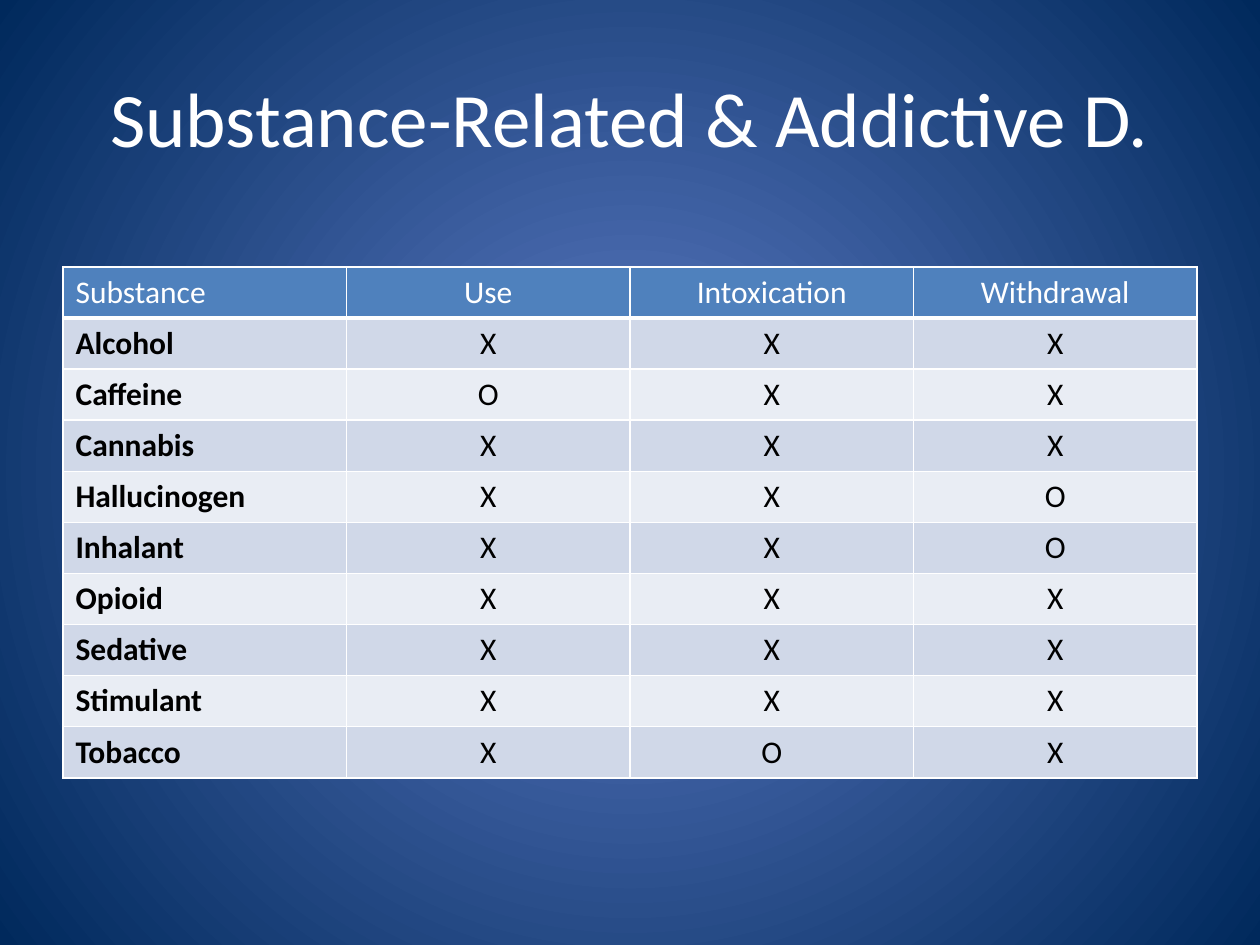
from typing import NamedTuple

from lxml.etree import SubElement
from pptx import Presentation
from pptx.dml.color import RGBColor
from pptx.enum.text import MSO_ANCHOR as Anchor, PP_ALIGN as Align
from pptx.oxml.ns import qn
from pptx.slide import Slide
from pptx.table import _Cell as Cell
from pptx.text.text import TextFrame
from pptx.util import Cm, Pt

COLORS = {
    "center": "5E7CC5",
    "edge": "00295C",
    "white": "FFFFFF",
    "black": "000000",
    "header": "4F81BD",
    "odd": "D0D8E8",
    "even": "E9EDF4",
}
FONT = "Calibri"
LEFT, WIDTH = Cm(1.27), Cm(22.86)
ROW_HEIGHT = Cm(1.03)


class Substance(NamedTuple):
    name: str
    use: str = "X"
    intoxication: str = "X"
    withdrawal: str = "X"


HEADINGS = Substance("Substance", "Use", "Intoxication", "Withdrawal")
SUBSTANCES = [
    Substance("Alcohol"),
    Substance("Caffeine", use="O"),
    Substance("Cannabis"),
    Substance("Hallucinogen", withdrawal="O"),
    Substance("Inhalant", withdrawal="O"),
    Substance("Opioid"),
    Substance("Sedative"),
    Substance("Stimulant"),
    Substance("Tobacco", intoxication="O"),
]


def rgb(color: str) -> RGBColor:
    return RGBColor.from_string(COLORS[color])


def write(frame: TextFrame, text: str, *, size: int = 18, color: str = "black",
          bold: bool = False, align: Align = Align.CENTER) -> None:
    paragraph = frame.paragraphs[0]
    paragraph.alignment = align
    run = paragraph.add_run()
    run.text = text
    run.font.name = FONT
    run.font.size = Pt(size)
    run.font.bold = bold
    run.font.color.rgb = rgb(color)


def paint_background(slide: Slide) -> None:
    fill = slide.background.fill
    fill.gradient()
    for stop, color, position in zip(fill.gradient_stops, ("center", "edge"), (0, 1)):
        stop.color.rgb = rgb(color)
        stop.position = position
    gradient = slide.element.find(".//" + qn("a:gradFill"))
    gradient.remove(gradient.find(qn("a:lin")))
    circle = SubElement(gradient, qn("a:path"), path="circle")
    SubElement(circle, qn("a:fillToRect"), l="50000", t="50000", r="50000", b="50000")


def draw_borders(cell: Cell, bottom: int) -> None:
    properties = cell._tc.get_or_add_tcPr()
    for side, width in {"L": 1, "R": 1, "T": 1, "B": bottom}.items():
        line = SubElement(properties, qn(f"a:ln{side}"), w=str(Pt(width)))
        solid = SubElement(line, qn("a:solidFill"))
        SubElement(solid, qn("a:srgbClr"), val=COLORS["white"])


def draw_title(slide: Slide, text: str) -> None:
    title = slide.shapes.add_textbox(LEFT, Cm(0.76), WIDTH, Cm(3.18)).text_frame
    title.word_wrap = True
    title.vertical_anchor = Anchor.MIDDLE
    write(title, text, size=44, color="white")


def draw_substances(slide: Slide, entries: list[Substance]) -> None:
    rows, columns = len(entries), len(Substance._fields)
    table = slide.shapes.add_table(
        rows, columns, LEFT, Cm(5.38), WIDTH, ROW_HEIGHT * rows).table
    for row, entry in enumerate(entries):
        table.rows[row].height = ROW_HEIGHT
        is_header = row == 0
        shade = "header" if is_header else "odd" if row % 2 else "even"
        for column, text in enumerate(entry):
            cell = table.cell(row, column)
            is_name = column == 0
            draw_borders(cell, bottom=3 if is_header else 1)
            cell.fill.solid()
            cell.fill.fore_color.rgb = rgb(shade)
            write(cell.text_frame, text,
                  color="white" if is_header else "black",
                  bold=is_name and not is_header,
                  align=Align.LEFT if is_name else Align.CENTER)


def main() -> None:
    deck = Presentation()
    deck.slide_width, deck.slide_height = Cm(25.4), Cm(19.05)
    slide = deck.slides.add_slide(deck.slide_layouts[6])
    paint_background(slide)
    draw_title(slide, "Substance-Related & Addictive D.")
    draw_substances(slide, [HEADINGS, *SUBSTANCES])
    deck.save("out.pptx")


if __name__ == "__main__":
    main()
